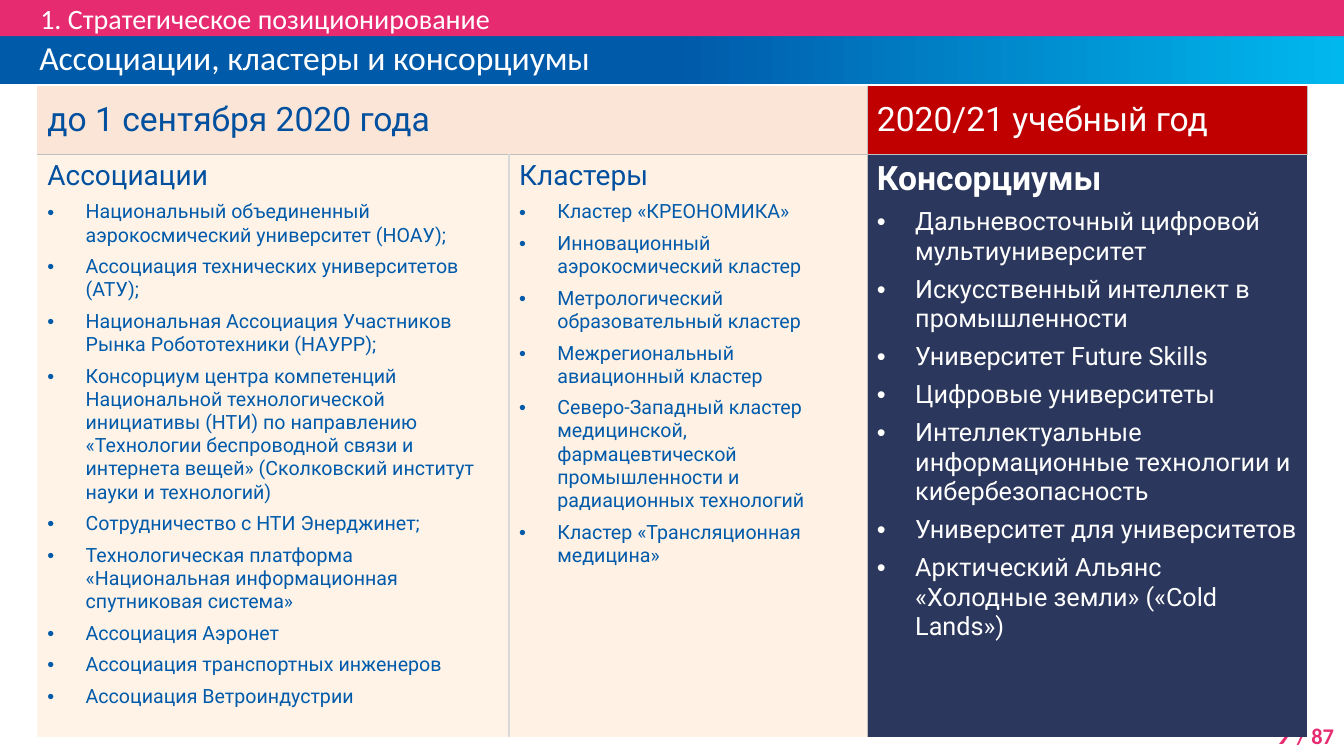
from dataclasses import dataclass

from lxml.etree import SubElement
from pptx import Presentation
from pptx.dml.color import RGBColor
from pptx.enum.shapes import MSO_SHAPE
from pptx.enum.text import MSO_ANCHOR, MSO_AUTO_SIZE, PP_ALIGN
from pptx.oxml.ns import qn
from pptx.util import Inches, Pt

COLUMNS, ROWS, UNIT = 160, 90, Pt(6)
TABLE_LEFT, TABLE_TOP = 4.44, 10.2
COLUMN_WIDTHS = (56.16, 42.6, 52.44)
ROW_HEIGHTS = (8.16, 69.36)
PLAIN_TABLE = "{2D5ABB26-0587-4C30-8999-92F81FD0307C}"


@dataclass(frozen=True)
class Theme:
    """Colours, fonts and type sizes of the slide."""
    pink: str = "E72B70"
    blue: str = "005AAA"
    sky: str = "00B8EE"
    white: str = "FFFFFF"
    heading: str = "01509F"
    peach: str = "FBE5D6"
    cream: str = "FFCC99"
    red: str = "C00000"
    navy: str = "2B375C"
    rule: str = "BFBFBF"
    light_rule: str = "D9D9D9"
    bar_font: str = "Calibri"
    table_font: str = "Roboto"
    large: int = 24
    medium: int = 20
    body_large: int = 18
    small: int = 16
    body: int = 14


THEME = Theme()

ASSOCIATIONS = (
    "Национальный объединенный аэрокосмический университет (НОАУ);",
    "Ассоциация технических университетов (АТУ);",
    "Национальная Ассоциация Участников Рынка Робототехники (НАУРР);",
    "Консорциум центра компетенций Национальной технологической инициативы (НТИ) по направлению "
    "«Технологии беспроводной связи и интернета вещей» (Сколковский институт науки и технологий)",
    "Сотрудничество с НТИ Энерджинет;",
    "Технологическая платформа «Национальная информационная спутниковая система»",
    "Ассоциация Аэронет",
    "Ассоциация транспортных инженеров",
    "Ассоциация Ветроиндустрии",
)
CLUSTERS = (
    "Кластер «КРЕОНОМИКА»",
    "Инновационный аэрокосмический кластер",
    "Метрологический образовательный кластер",
    "Межрегиональный авиационный кластер",
    "Северо-Западный кластер медицинской, фармацевтической промышленности и радиационных технологий",
    "Кластер «Трансляционная медицина»",
)
CONSORTIA = (
    "Дальневосточный цифровой мультиуниверситет",
    "Искусственный интеллект в промышленности",
    "Университет Future Skills",
    "Цифровые университеты",
    "Интеллектуальные информационные технологии и кибербезопасность",
    "Университет для университетов",
    "Арктический Альянс «Холодные земли» («Cold Lands»)",
)


def grid(*counts):
    """Turn counts of grid cells into lengths."""
    return [round(count * UNIT) for count in counts]


def apply(target, values):
    """Set attributes of an object from a dict."""
    for name, value in values.items():
        setattr(target, name, value)


def add_run(paragraph, text, font, size, color, bold=False):
    """Append a formatted run to a paragraph."""
    run = paragraph.add_run()
    run.text = text
    apply(run.font, {"name": font, "size": Pt(size), "bold": bold})
    run.font.color.rgb = RGBColor.from_string(color)


def set_bar_text(shape, text, size, indent, inset):
    """Write one left-aligned line into a heading bar."""
    frame = shape.text_frame
    apply(frame, {
        "word_wrap": True, "auto_size": MSO_AUTO_SIZE.NONE, "vertical_anchor": MSO_ANCHOR.MIDDLE,
        "margin_left": inset, "margin_right": inset, "margin_top": 0, "margin_bottom": 0,
    })
    paragraph = frame.paragraphs[0]
    paragraph.alignment = PP_ALIGN.LEFT
    properties = paragraph._p.get_or_add_pPr()
    properties.set("marL", str(Inches(indent)))
    properties.set("indent", "0")
    add_run(paragraph, text, THEME.bar_font, size, THEME.white)
    return paragraph


def add_section_bar(slide, text):
    """Draw the pink bar with the section name."""
    bar = slide.shapes.add_shape(MSO_SHAPE.RECTANGLE, *grid(0, 0, COLUMNS, 4.32))
    bar.shadow.inherit = False
    bar.fill.solid()
    bar.fill.fore_color.rgb = RGBColor.from_string(THEME.pink)
    bar.line.fill.background()
    set_bar_text(bar, text, THEME.medium, 0.4, 0)


def format_title(slide, text):
    """Place the title on a blue gradient bar."""
    title = slide.shapes.title
    apply(title, dict(zip(("left", "top", "width", "height"), grid(0, 4.32, COLUMNS, 5.64))))
    title.fill.gradient()
    title.fill.gradient_angle = 0
    for stop, position, color in zip(title.fill.gradient_stops, (0.5, 1), (THEME.blue, THEME.sky)):
        stop.position = position
        stop.color.rgb = RGBColor.from_string(color)
    paragraph = set_bar_text(title, text, THEME.large, 0.29, Inches(0.1))
    paragraph.line_spacing = Pt(THEME.large)


def add_page_number(slide):
    """Write the page count in the lower right corner."""
    box = slide.shapes.add_textbox(*grid(145.6, 84.72, 14.4, 5.28))
    box.text_frame.word_wrap = True
    paragraph = box.text_frame.paragraphs[0]
    paragraph.alignment = PP_ALIGN.RIGHT
    for text, size in (("9 ", THEME.medium), ("/ 87", THEME.small)):
        add_run(paragraph, text, THEME.bar_font, size, THEME.pink, True)


def add_border(cell, side, color, width):
    """Add a solid border to one side of a cell."""
    line = SubElement(cell._tc.get_or_add_tcPr(), qn(f"a:ln{side}"), w=str(Pt(width)))
    SubElement(SubElement(line, qn("a:solidFill")), qn("a:srgbClr"), val=color)


def fill_cell(cell, color, opacity=100):
    """Fill a cell, with partial opacity where given."""
    cell.fill.solid()
    cell.fill.fore_color.rgb = RGBColor.from_string(color)
    if opacity < 100:
        color_element = cell._tc.tcPr.find(f".//{qn('a:solidFill')}[last()]/{qn('a:srgbClr')}")
        for element in cell._tc.tcPr.findall(qn("a:solidFill")):
            color_element = element.find(qn("a:srgbClr"))
        SubElement(color_element, qn("a:alpha"), val=str(opacity * 1000))


def add_bullet(frame, text, size, color):
    """Append a bulleted paragraph with a hanging indent."""
    paragraph = frame.add_paragraph()
    paragraph.space_before = Pt(6)
    properties = paragraph._p.get_or_add_pPr()
    properties.set("marL", str(Inches(0.38)))
    properties.set("indent", str(-Inches(0.38)))
    SubElement(properties, qn("a:buFont"), typeface="Arial")
    SubElement(properties, qn("a:buChar"), char="•")
    add_run(paragraph, text, THEME.table_font, size, color)


def add_table(slide):
    """Create the merged two-row table on the grid."""
    size = sum(COLUMN_WIDTHS), sum(ROW_HEIGHTS)
    frame = slide.shapes.add_table(2, 3, *grid(TABLE_LEFT, TABLE_TOP, *size))
    table = frame.table
    apply(table, {"first_row": False, "horz_banding": False})
    table._tbl.tblPr.find(qn("a:tableStyleId")).text = PLAIN_TABLE
    for column, width in zip(table.columns, grid(*COLUMN_WIDTHS)):
        column.width = width
    for row, height in zip(table.rows, grid(*ROW_HEIGHTS)):
        row.height = height
    table.cell(0, 0).merge(table.cell(0, 1))
    return table


def fill_table(table):
    """Write and format the period headings and the lists."""
    edge, inner = (THEME.rule, 0.5), (THEME.light_rule, 1)
    cells = (
        (0, 0, "до 1 сентября 2020 года", THEME.large, THEME.heading, (), 0, "",
         THEME.peach, 100, {"R": edge, "B": edge}),
        (0, 2, "2020/21 учебный год", THEME.large, THEME.white, (), 0, "",
         THEME.red, 100, {"L": edge, "B": edge}),
        (1, 0, "Ассоциации", THEME.medium, THEME.heading, ASSOCIATIONS, THEME.body, THEME.blue,
         THEME.cream, 22, {"R": inner, "T": edge}),
        (1, 1, "Кластеры", THEME.medium, THEME.heading, CLUSTERS, THEME.body, THEME.blue,
         THEME.cream, 26, {"L": inner, "R": edge, "T": edge}),
        (1, 2, "Консорциумы", THEME.large, THEME.white, CONSORTIA, THEME.body_large, THEME.white,
         THEME.navy, 100, {"L": edge, "T": edge}),
    )
    for row, column, heading, size, color, items, item_size, item_color, fill, opacity, borders in cells:
        cell = table.cell(row, column)
        for side, (border_color, width) in borders.items():
            add_border(cell, side, border_color, width)
        fill_cell(cell, fill, opacity)
        cell.vertical_anchor = MSO_ANCHOR.TOP if items else MSO_ANCHOR.MIDDLE
        bold = items is CONSORTIA
        add_run(cell.text_frame.paragraphs[0], heading, THEME.table_font, size, color, bold)
        for item in items:
            add_bullet(cell.text_frame, item, item_size, item_color)


def main():
    """Build the slide and save it."""
    presentation = Presentation()
    apply(presentation, dict(zip(("slide_width", "slide_height"), grid(COLUMNS, ROWS))))
    slide = presentation.slides.add_slide(presentation.slide_layouts[5])
    add_page_number(slide)
    format_title(slide, "Ассоциации, кластеры и консорциумы")
    add_section_bar(slide, "1. Стратегическое позиционирование")
    fill_table(add_table(slide))
    presentation.save("out.pptx")


if __name__ == "__main__":
    main()
